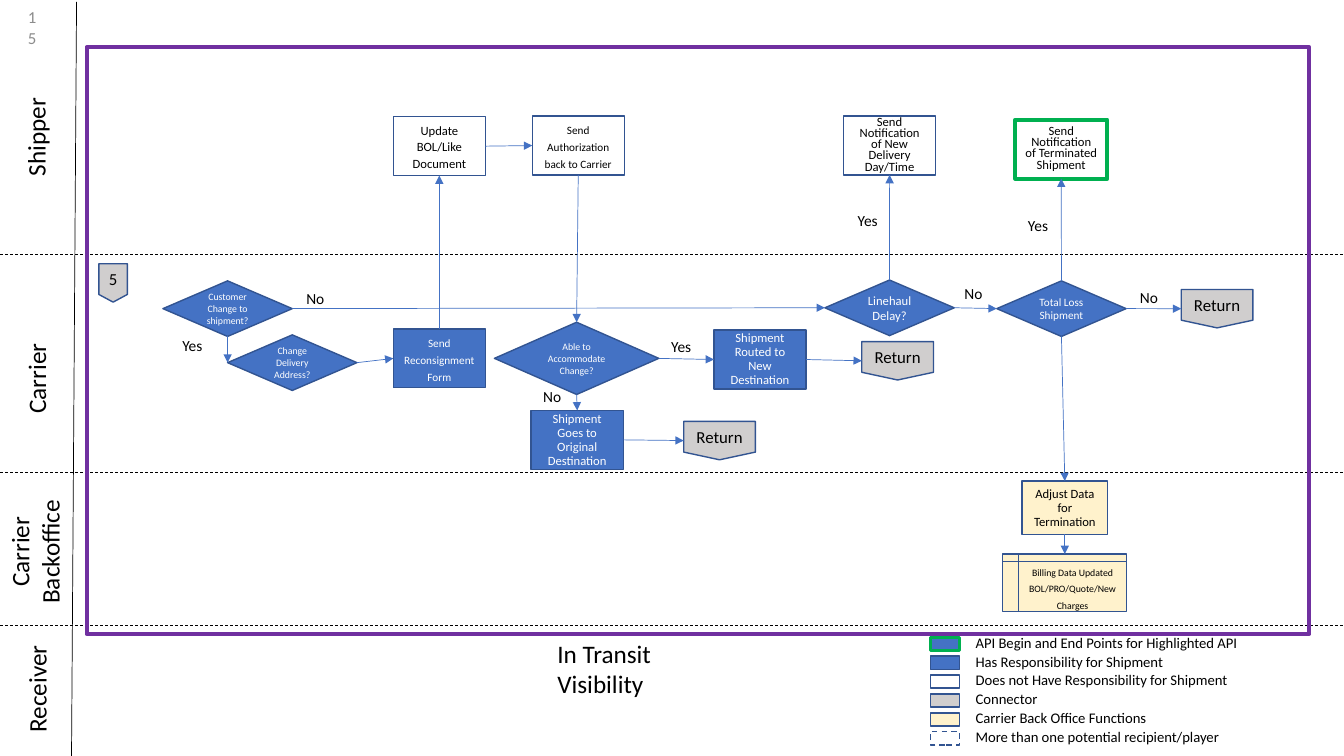
from dataclasses import dataclass

from lxml.etree import SubElement
from pptx import Presentation
from pptx.dml.color import RGBColor
from pptx.enum.dml import MSO_LINE
from pptx.enum.shapes import MSO_CONNECTOR, MSO_SHAPE
from pptx.enum.text import MSO_ANCHOR, PP_ALIGN
from pptx.oxml.ns import qn
from pptx.util import Pt

BLACK, WHITE, BLUE, NAVY = "000000", "FFFFFF", "4472C4", "325491"
GRAY, CREAM, GREEN, PURPLE = "D0CECE", "FFF2CC", "00B050", "7030A0"
TOP, LEFT, BOTTOM, RIGHT = range(4)

PROCESS = MSO_SHAPE.FLOWCHART_PROCESS
DECISION = MSO_SHAPE.FLOWCHART_DECISION
OFFPAGE = MSO_SHAPE.FLOWCHART_OFFPAGE_CONNECTOR
STORAGE = MSO_SHAPE.FLOWCHART_INTERNAL_STORAGE


@dataclass
class Node:
    kind: MSO_SHAPE
    box: tuple
    text: str
    size: float
    fill: str | None = None
    spacing: float | None = None
    line: str = NAVY
    weight: float = 1


@dataclass
class Label:
    text: str
    box: tuple
    size: float = 11
    rotation: float = 0
    wrap: bool = True
    align: PP_ALIGN = PP_ALIGN.LEFT
    color: str = BLACK
    anchor: MSO_ANCHOR = MSO_ANCHOR.TOP


@dataclass
class LegendRow:
    text: str
    fill: str | None
    line: str = NAVY
    weight: float = 1
    dash: MSO_LINE | None = None


STEP = (65.7, 42)
CHOICE = (92.4, 39.7)
TAG = (51.2, 27.4)

NODES = {
    "page 5": Node(OFFPAGE, (70.6, 188.4, 20.4, 27.4), "5", 12, GRAY),
    "customer change": Node(DECISION, (116.4, 200.6, *CHOICE), "Customer Change to shipment?", 7, BLUE),
    "change address": Node(DECISION, (162.6, 239.2, *CHOICE), "Change Delivery Address?", 7, BLUE),
    "reconsignment": Node(PROCESS, (281, 235, *STEP), "Send\nReconsignment\nForm", 8, BLUE, 12),
    "update document": Node(PROCESS, (281, 83.4, *STEP), "Update BOL/Like Document", 9, None, 12),
    "authorization": Node(PROCESS, (380.2, 83, *STEP), "Send Authorization back to Carrier", 8, None, 12),
    "accommodate": Node(DECISION, (353.2, 230.2, 117.4, 51.6), "Able to Accommodate Change?", 7, BLUE),
    "original route": Node(PROCESS, (379.3, 293.2, 66, 42), "Shipment Goes to Original Destination", 9, BLUE, 10),
    "new route": Node(PROCESS, (510, 235.8, *STEP), "Shipment Routed to New Destination", 9, BLUE, 10),
    "linehaul delay": Node(DECISION, (589.2, 200, *CHOICE), "Linehaul Delay?", 9, BLUE),
    "new day": Node(PROCESS, (602.6, 83, *STEP), "Send Notification of New Delivery Day/Time", 9, None, 8),
    "total loss": Node(DECISION, (712, 200.6, *CHOICE), "Total Loss\nShipment", 8, BLUE),
    "terminated": Node(PROCESS, (725.2, 85.6, *STEP), "Send Notification of Terminated\nShipment", 9, None, 8,
                       GREEN, 3),
    "loss return": Node(OFFPAGE, (843.8, 206.8, *TAG), "Return", 12, GRAY),
    "adjust data": Node(PROCESS, (730, 343.6, 61.2, 38), "Adjust Data for Termination", 9, CREAM, 10),
    "billing": Node(STORAGE, (716.3, 395.8, 88.6, 41), "Billing Data Updated\nBOL/PRO/Quote/New Charges", 7, CREAM, 12),
    "new return": Node(OFFPAGE, (615.6, 244, *TAG), "Return", 12, GRAY),
    "original return": Node(OFFPAGE, (488.4, 301, *TAG), "Return", 12, GRAY),
}

FLOWS = [
    ("customer change", RIGHT, "linehaul delay", LEFT),
    ("customer change", BOTTOM, "change address", LEFT),
    ("change address", RIGHT, "reconsignment", LEFT),
    ("reconsignment", TOP, "update document", BOTTOM),
    ("update document", RIGHT, "authorization", LEFT),
    ("authorization", BOTTOM, "accommodate", TOP),
    ("accommodate", BOTTOM, "original route", TOP),
    ("accommodate", RIGHT, "new route", LEFT),
    ("new route", RIGHT, "new return", LEFT),
    ("original route", RIGHT, "original return", LEFT),
    ("linehaul delay", TOP, "new day", BOTTOM),
    ("linehaul delay", RIGHT, "total loss", LEFT),
    ("total loss", TOP, "terminated", BOTTOM),
    ("total loss", RIGHT, "loss return", LEFT),
    ("total loss", BOTTOM, "adjust data", TOP),
    ("adjust data", BOTTOM, "billing", TOP),
]

YES, NO = (29.5, 20.6), (27.4, 20.6)
LABELS = [
    Label("Shipper", (-10.1, 82.8, 71.3, 29), 18, 270, False),
    Label("Carrier", (-10.1, 252, 72, 29), 18, 270),
    Label("Receiver", (-14.4, 475.2, 81.4, 29), 18, 270),
    Label("Carrier Backoffice", (-23, 368.6, 95.8, 51), 18, 270, align=PP_ALIGN.CENTER),
    Label("15", (11.5, 5, 21.6, 29), 12, align=PP_ALIGN.RIGHT, color="8C8C8C", anchor=MSO_ANCHOR.MIDDLE),
    Label("In Transit Visibility", (391, 452.2, 97.2, 51), 18),
    Label("Yes", (123.1, 236.2, *YES), wrap=False),
    Label("Yes", (472.3, 236.9, *YES), wrap=False),
    Label("Yes", (605.5, 147.6, *YES), wrap=False),
    Label("Yes", (727.2, 150.5, *YES), wrap=False),
    Label("No", (211.7, 203, *NO), wrap=False),
    Label("No", (380.9, 272.9, *NO), wrap=False),
    Label("No", (681.8, 199.4, *NO), wrap=False),
    Label("No", (807.1, 202.3, *NO), wrap=False),
]

LEGEND = [
    LegendRow("API Begin and End Points for Highlighted API", BLUE, GREEN, 2.25),
    LegendRow("Has Responsibility for Shipment", BLUE),
    LegendRow("Does not Have Responsibility for Shipment", WHITE),
    LegendRow("Connector", GRAY),
    LegendRow("Carrier Back Office Functions", CREAM),
    LegendRow("More than one potential recipient/player", None, dash=MSO_LINE.DASH),
]
LEGEND_TOP, LEGEND_STEP = 455.2, 13.5
LANE_BORDERS = (181.4, 337.7, 446.4)


def rgb(color: str) -> RGBColor:
    return RGBColor.from_string(color)


def points(values: tuple) -> list:
    return [Pt(value) for value in values]


def apply(target, values: dict) -> None:
    for name, value in values.items():
        setattr(target, name, value)


def write(shape, text: str, size: float, color: str, align: PP_ALIGN, spacing: float | None, frame: dict) -> None:
    """Put each line of the text in a paragraph of its own."""
    apply(shape.text_frame, frame)
    for index, line in enumerate(text.split("\n")):
        paragraph = shape.text_frame.add_paragraph() if index else shape.text_frame.paragraphs[0]
        apply(paragraph, {"alignment": align, "line_spacing": Pt(spacing) if spacing else None})
        run = paragraph.add_run()
        run.text = line
        apply(run.font, {"name": "Calibri", "size": Pt(size)})
        run.font.color.rgb = rgb(color)


def add_box(slide, kind: MSO_SHAPE, box: tuple, fill: str | None, line: str, weight: float,
            dash: MSO_LINE | None = None):
    shape = slide.shapes.add_shape(kind, *points(box))
    shape.shadow.inherit = False
    if fill:
        shape.fill.solid()
        shape.fill.fore_color.rgb = rgb(fill)
    else:
        shape.fill.background()
    shape.line.color.rgb = rgb(line)
    apply(shape.line, {"width": Pt(weight), "dash_style": dash})
    return shape


def add_node(slide, node: Node):
    shape = add_box(slide, node.kind, node.box, node.fill, node.line, node.weight)
    color = WHITE if node.fill == BLUE else BLACK
    frame = {"word_wrap": True, "vertical_anchor": MSO_ANCHOR.MIDDLE, "margin_left": Pt(7), "margin_right": Pt(7)}
    write(shape, node.text, node.size, color, PP_ALIGN.CENTER, node.spacing, frame)
    return shape


def add_label(slide, label: Label) -> None:
    shape = slide.shapes.add_textbox(*points(label.box))
    shape.rotation = label.rotation
    frame = {"word_wrap": label.wrap, "vertical_anchor": label.anchor}
    write(shape, label.text, label.size, label.color, label.align, None, frame)


def add_line(slide, ends: tuple, color: str, dash: MSO_LINE | None = None):
    connector = slide.shapes.add_connector(MSO_CONNECTOR.STRAIGHT, *points(ends))
    connector.line.color.rgb = rgb(color)
    apply(connector.line, {"width": Pt(0.5), "dash_style": dash})
    SubElement(connector.element.spPr, qn("a:effectLst"))
    return connector


def add_flow(slide, source, source_side: int, target, target_side: int) -> None:
    connector = add_line(slide, (0, 0, 0, 0), BLUE)
    connector.begin_connect(source, source_side)
    connector.end_connect(target, target_side)
    SubElement(connector.element.spPr.find(qn("a:ln")), qn("a:tailEnd"), type="triangle")


def main() -> None:
    presentation = Presentation()
    apply(presentation, {"slide_width": Pt(960), "slide_height": Pt(540)})
    slide = presentation.slides.add_slide(presentation.slide_layouts[6])
    for border in LANE_BORDERS:
        add_line(slide, (0, border, 960, border), BLACK, MSO_LINE.DASH)
    add_line(slide, (54.7, 1.4, 51.1, 540), BLACK)
    shapes = {name: add_node(slide, node) for name, node in NODES.items()}
    for source, source_side, target, target_side in FLOWS:
        add_flow(slide, shapes[source], source_side, shapes[target], target_side)
    for label in LABELS:
        add_label(slide, label)
    add_box(slide, MSO_SHAPE.RECTANGLE, (61.9, 33.8, 873.4, 419), None, PURPLE, 3)
    for index, row in enumerate(LEGEND):
        top = LEGEND_TOP + index * LEGEND_STEP
        add_box(slide, MSO_SHAPE.RECTANGLE, (664.6, top, 20.9, 9.4), row.fill, row.line, row.weight, row.dash)
        add_label(slide, Label(row.text, (689.8, top - 6.2, 216, 20), 10.5))
    presentation.save("out.pptx")


if __name__ == "__main__":
    main()
